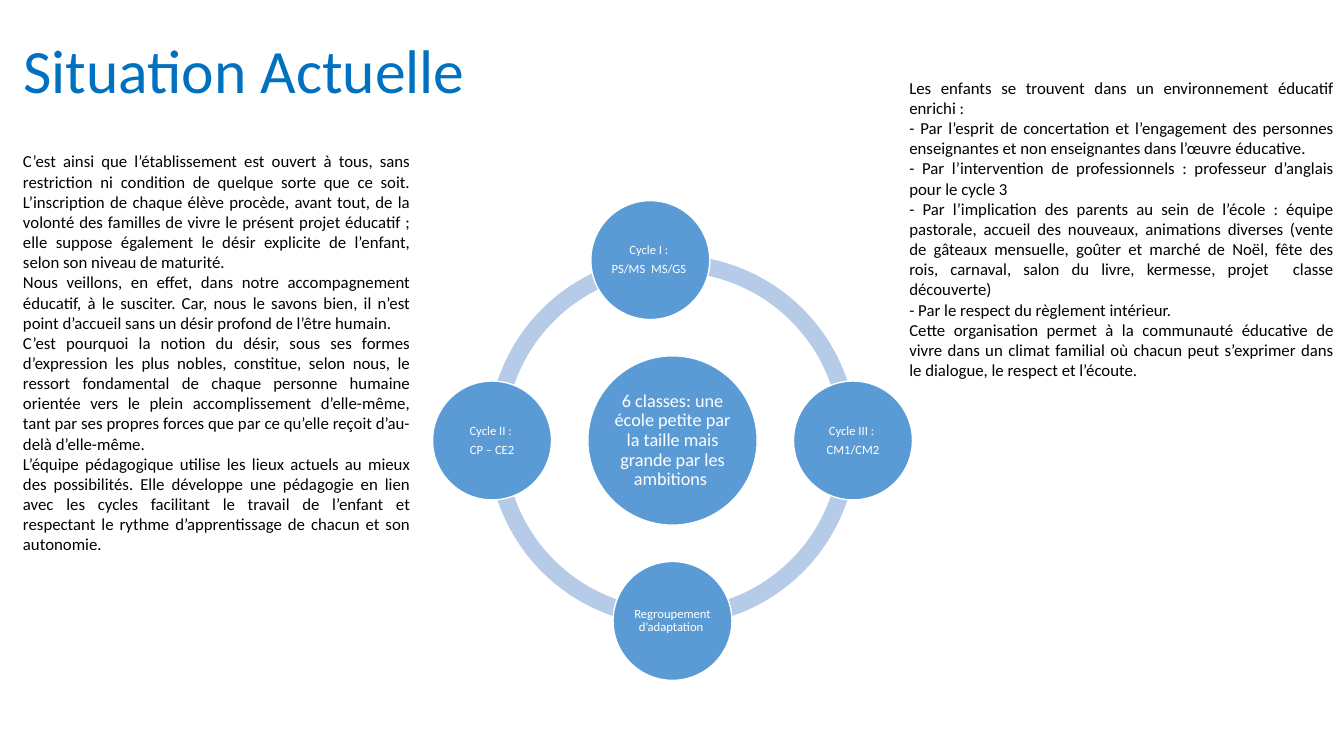
from dataclasses import dataclass

from pptx import Presentation
from pptx.dml.color import RGBColor
from pptx.enum import shapes, text
from pptx.util import Inches, Pt


@dataclass(frozen=True)
class Theme:
    """Colours, font and type sizes of the slide."""
    font: str = "Calibri"
    title_color: RGBColor = RGBColor(0x00, 0x70, 0xC0)
    body_color: RGBColor = RGBColor(0x00, 0x00, 0x00)
    circle_color: RGBColor = RGBColor(0x5B, 0x9B, 0xD5)
    ring_color: RGBColor = RGBColor(0xB5, 0xCB, 0xE7)
    white: RGBColor = RGBColor(0xFF, 0xFF, 0xFF)
    title_size: int = 44
    body_size: int = 12
    hub_size: int = 13
    cycle_size: int = 9


THEME = Theme()
CENTER_X, CENTER_Y = 6.67, 4.37
ORBIT = 1.79
RING_DIAMETER = 3.66
RING_THICKNESS = 0.046
HUB_DIAMETER, CYCLE_DIAMETER = 1.68, 1.18

ARCS = [
    (179.53, 263.06, 2.53),
    (90, 180, 2.55),
    (0, 90, 2.55),
    (263.05, 0.47, 2.53),
]
HUB = ["6 classes: une école petite par la taille mais grande par les ambitions "]
CYCLES = [
    (-0.22, -ORBIT, ["Cycle I : ", "PS/MS  MS/GS "]),
    (ORBIT, 0, ["Cycle III : ", "CM1/CM2"]),
    (0, ORBIT, ["Regroupement d’adaptation "]),
    (-ORBIT, 0, ["Cycle II : ", "CP – CE2"]),
]
WELCOME = [
    "C’est ainsi que l’établissement est ouvert à tous, sans restriction ni condition de quelque "
    "sorte que ce soit. L’inscription de chaque élève procède, avant tout, de la volonté des "
    "familles de vivre le présent projet éducatif ; elle suppose également le désir explicite de "
    "l’enfant, selon son niveau de maturité.",
    "Nous veillons, en effet, dans notre accompagnement éducatif, à le susciter. Car, nous le "
    "savons bien, il n’est point d’accueil sans un désir profond de l’être humain. ",
    "C’est pourquoi la notion du désir, sous ses formes d’expression les plus nobles, constitue, "
    "selon nous, le ressort fondamental de chaque personne humaine orientée vers le plein "
    "accomplissement d’elle-même, tant par ses propres forces que par ce qu’elle reçoit "
    "d’au-delà d’elle-même.",
    "L’équipe pédagogique utilise les lieux actuels au mieux des possibilités. Elle développe une "
    "pédagogie en lien avec les cycles facilitant le travail de l’enfant et respectant le rythme "
    "d’apprentissage de chacun et son autonomie.",
]
ENVIRONMENT = [
    "Les enfants se trouvent dans un environnement éducatif enrichi :",
    "- Par l’esprit de concertation et l’engagement des personnes enseignantes et non "
    "enseignantes dans l’œuvre éducative.",
    "- Par l’intervention de professionnels : professeur d’anglais pour le cycle 3 ",
    "- Par l’implication des parents au sein de l’école : équipe pastorale, accueil des nouveaux, "
    "animations diverses (vente de gâteaux mensuelle, goûter et marché de Noël, fête des rois, "
    "carnaval, salon du livre, kermesse, projet  classe découverte)",
    "- Par le respect du règlement intérieur.",
    "Cette organisation permet à la communauté éducative de vivre dans un climat familial où "
    "chacun peut s’exprimer dans le dialogue, le respect et l’écoute.",
]


def write_paragraphs(frame, lines, size, color, alignment, line_spacing=1.0, space_after=0):
    """Fill a text frame with evenly formatted paragraphs."""
    frame.word_wrap = True
    frame.text = "\n".join(lines)
    for paragraph in frame.paragraphs:
        paragraph.alignment = alignment
        paragraph.line_spacing = line_spacing
        paragraph.space_after = Pt(space_after)
        for run in paragraph.runs:
            run.font.name = THEME.font
            run.font.size = Pt(size)
            run.font.color.rgb = color


def set_title(slide, title):
    """Place and format the title placeholder."""
    shape = slide.shapes.title
    shape.left, shape.top = Inches(0.13), Inches(0)
    shape.width, shape.height = Inches(11.5), Inches(1.45)
    frame = shape.text_frame
    frame.auto_size = text.MSO_AUTO_SIZE.NONE
    frame.vertical_anchor = text.MSO_ANCHOR.MIDDLE
    write_paragraphs(frame, [title], THEME.title_size, THEME.title_color,
                     text.PP_ALIGN.LEFT, 0.9)


def add_body(slide, left, top, width, height, lines):
    """Add a justified column of body text."""
    box = slide.shapes.add_textbox(Inches(left), Inches(top), Inches(width), Inches(height))
    write_paragraphs(box.text_frame, lines, THEME.body_size, THEME.body_color,
                     text.PP_ALIGN.JUSTIFY)
    box.text_frame.auto_size = text.MSO_AUTO_SIZE.SHAPE_TO_FIT_TEXT


def add_arc(slide, start, end, top):
    """Add one arc of the ring, with its angles in degrees."""
    arc = slide.shapes.add_shape(
        shapes.MSO_SHAPE.BLOCK_ARC, Inches(CENTER_X - RING_DIAMETER / 2), Inches(top),
        Inches(RING_DIAMETER), Inches(RING_DIAMETER))
    for index, value in enumerate((start * 0.6, end * 0.6, RING_THICKNESS)):
        arc.adjustments[index] = value
    arc.shadow.inherit = False
    arc.fill.solid()
    arc.fill.fore_color.rgb = THEME.ring_color
    arc.line.fill.background()


def add_circle(slide, center_x, center_y, diameter, lines, size, inset):
    """Add a labelled circle around a centre point."""
    circle = slide.shapes.add_shape(
        shapes.MSO_SHAPE.OVAL, Inches(center_x - diameter / 2), Inches(center_y - diameter / 2),
        Inches(diameter), Inches(diameter))
    circle.shadow.inherit = False
    circle.fill.solid()
    circle.fill.fore_color.rgb = THEME.circle_color
    circle.line.color.rgb = THEME.white
    circle.line.width = Pt(1)
    frame = circle.text_frame
    frame.margin_left = frame.margin_right = Inches(inset)
    frame.margin_top = frame.margin_bottom = Inches(inset)
    frame.vertical_anchor = text.MSO_ANCHOR.MIDDLE
    write_paragraphs(frame, lines, size, THEME.white, text.PP_ALIGN.CENTER, 0.9, size * 0.42)


def main():
    """Build and save the slide."""
    presentation = Presentation()
    presentation.slide_width, presentation.slide_height = Inches(13.33), Inches(7.5)
    slide = presentation.slides.add_slide(presentation.slide_layouts.get_by_name("Title Only"))
    set_title(slide, "Situation Actuelle")
    for start, end, top in ARCS:
        add_arc(slide, start, end, top)
    add_circle(slide, CENTER_X, CENTER_Y, HUB_DIAMETER, HUB, THEME.hub_size, 0.02)
    for offset_x, offset_y, lines in CYCLES:
        add_circle(slide, CENTER_X + offset_x, CENTER_Y + offset_y, CYCLE_DIAMETER, lines,
                   THEME.cycle_size, 0.01)
    add_body(slide, 0.13, 1.45, 4.04, 4.38, WELCOME)
    add_body(slide, 8.92, 0.72, 4.41, 3.13, ENVIRONMENT)
    presentation.save("out.pptx")


if __name__ == "__main__":
    main()
